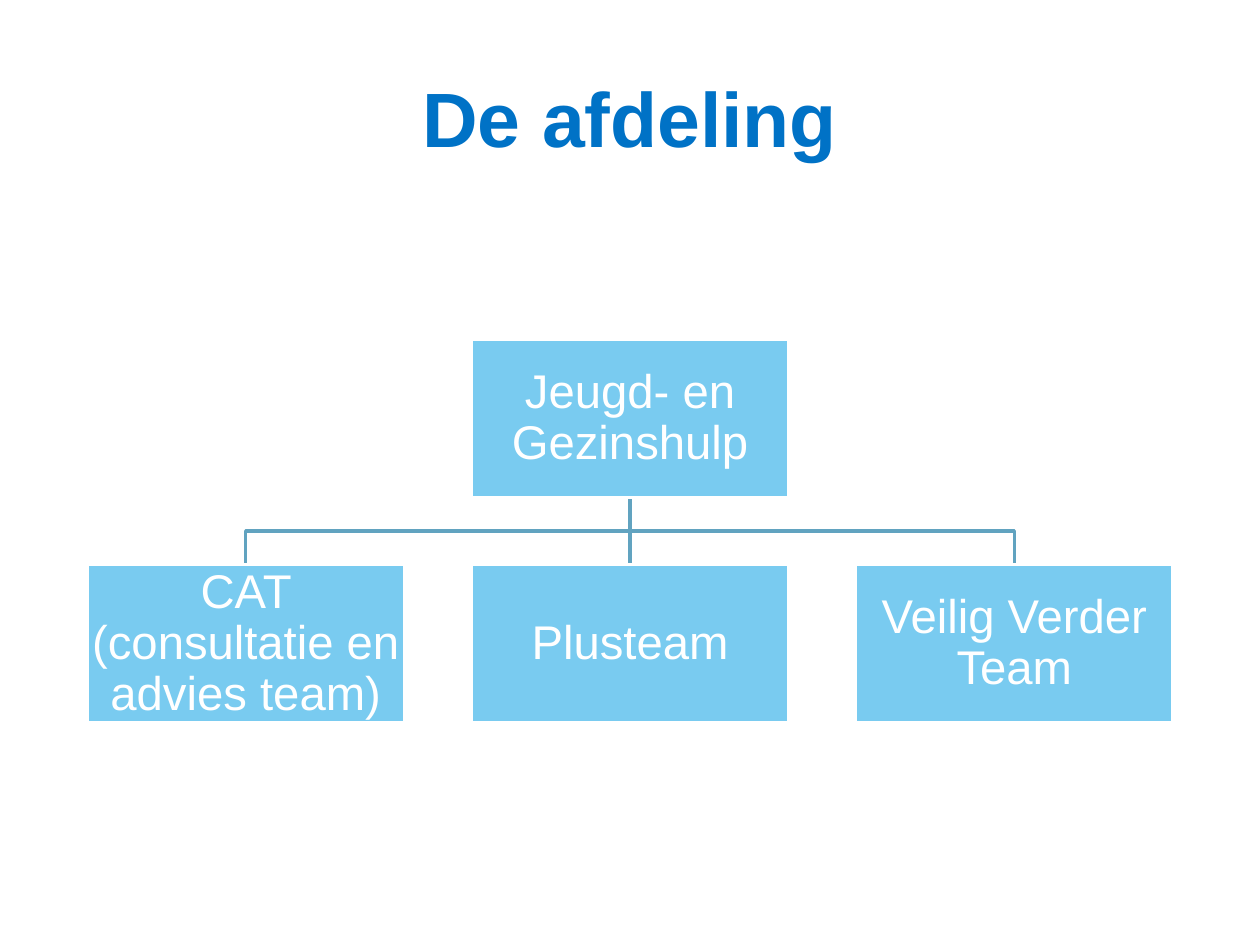
from dataclasses import dataclass

from lxml import etree
from pptx import Presentation
from pptx.dml.color import RGBColor
from pptx.enum.shapes import MSO_CONNECTOR, MSO_SHAPE
from pptx.enum.text import MSO_ANCHOR, PP_ALIGN
from pptx.oxml.ns import qn
from pptx.util import Inches, Pt

STRAIGHT = MSO_CONNECTOR.STRAIGHT
RECTANGLE = MSO_SHAPE.RECTANGLE
MIDDLE = MSO_ANCHOR.MIDDLE
CENTER = PP_ALIGN.CENTER
TOP_SIDE, BOTTOM_SIDE = 0, 2

COLORS = {"title": "0072C6", "box": "79CBF0", "link": "61A3C0", "white": "FFFFFF"}

# Chart grid, in inches
BOX_WIDTH, BOX_HEIGHT = 2.52, 1.26
COLUMN_STEP, ROW_STEP = 3.05, 1.79
GRID_LEFT, GRID_TOP = 0.69, 2.69
LINE_WIDTH = Pt(2)
MARGIN = Inches(0.02)


@dataclass
class Unit:
    name: str
    column: int
    row: int

    @property
    def left(self) -> float:
        return GRID_LEFT + self.column * COLUMN_STEP

    @property
    def top(self) -> float:
        return GRID_TOP + self.row * ROW_STEP

    @property
    def center(self) -> float:
        return self.left + BOX_WIDTH / 2

    @property
    def bottom(self) -> float:
        return self.top + BOX_HEIGHT


DEPARTMENT = Unit("Jeugd- en Gezinshulp", 1, 0)
TEAMS = [
    Unit("CAT (consultatie en advies team)", 0, 1),
    Unit("Plusteam", 1, 1),
    Unit("Veilig Verder Team", 2, 1),
]


def color(name: str) -> RGBColor:
    return RGBColor.from_string(COLORS[name])


def write_text(frame, text: str, margin: int, line_spacing: float, formats: dict) -> None:
    frame.word_wrap = True
    frame.vertical_anchor = MIDDLE
    for side in ("left", "top", "right", "bottom"):
        setattr(frame, f"margin_{side}", margin)
    para = frame.paragraphs[0]
    para.alignment = CENTER
    para.line_spacing = line_spacing
    span = para.add_run()
    span.text = text
    for key, value in formats.items():
        setattr(span.font, key, value)


def set_line(shape, name: str) -> None:
    shape.line.color.rgb = color(name)
    shape.line.width = LINE_WIDTH


def draw_box(page, unit: Unit):
    box = page.shapes.add_shape(
        RECTANGLE, *map(Inches, (unit.left, unit.top, BOX_WIDTH, BOX_HEIGHT)))
    box.shadow.inherit = False
    box.fill.solid()
    box.fill.fore_color.rgb = color("box")
    set_line(box, "white")
    formats = {"name": "Arial", "size": Pt(27)}
    write_text(box.text_frame, unit.name, MARGIN, 0.9, formats)
    box.text_frame.paragraphs[0].runs[0].font.color.rgb = color("white")
    return box


def draw_straight(page, parent: Unit, child: Unit):
    link = page.shapes.add_connector(
        STRAIGHT, *map(Inches, (parent.center, parent.bottom, child.center, child.top)))
    etree.SubElement(link.line._get_or_add_ln().getparent(), qn("a:effectLst"))
    set_line(link, "link")
    return link


def draw_elbow(page, parent: Unit, child: Unit) -> None:
    bend = (parent.bottom + child.top) / 2
    points = [(parent.center, bend), (child.center, bend), (child.center, child.top)]
    builder = page.shapes.build_freeform(Inches(parent.center), Inches(parent.bottom))
    builder.add_line_segments([(Inches(x), Inches(y)) for x, y in points], close=False)
    elbow = builder.convert_to_shape()
    elbow.shadow.inherit = False
    elbow.fill.background()
    set_line(elbow, "link")


def main() -> None:
    deck = Presentation()
    deck.slide_width, deck.slide_height = Inches(10), Inches(7.5)
    page = deck.slides.add_slide(deck.slide_layouts[5])

    # Title
    title = page.shapes.title
    title.left, title.top = Inches(0.5), Inches(0.3)
    title.width, title.height = Inches(9), Inches(1.25)
    formats = {"name": "Arial", "size": Pt(44), "bold": True}
    write_text(title.text_frame, "De afdeling", Inches(0.05), 1.0, formats)
    title.text_frame.paragraphs[0].runs[0].font.color.rgb = color("title")

    # Links lie behind the boxes
    left_team, middle_team, right_team = TEAMS
    draw_elbow(page, DEPARTMENT, right_team)
    link = draw_straight(page, DEPARTMENT, middle_team)
    draw_elbow(page, DEPARTMENT, left_team)

    # Boxes
    department_box = draw_box(page, DEPARTMENT)
    team_boxes = [draw_box(page, team) for team in TEAMS]
    link.begin_connect(department_box, BOTTOM_SIDE)
    link.end_connect(team_boxes[1], TOP_SIDE)

    deck.save("out.pptx")


if __name__ == "__main__":
    main()
